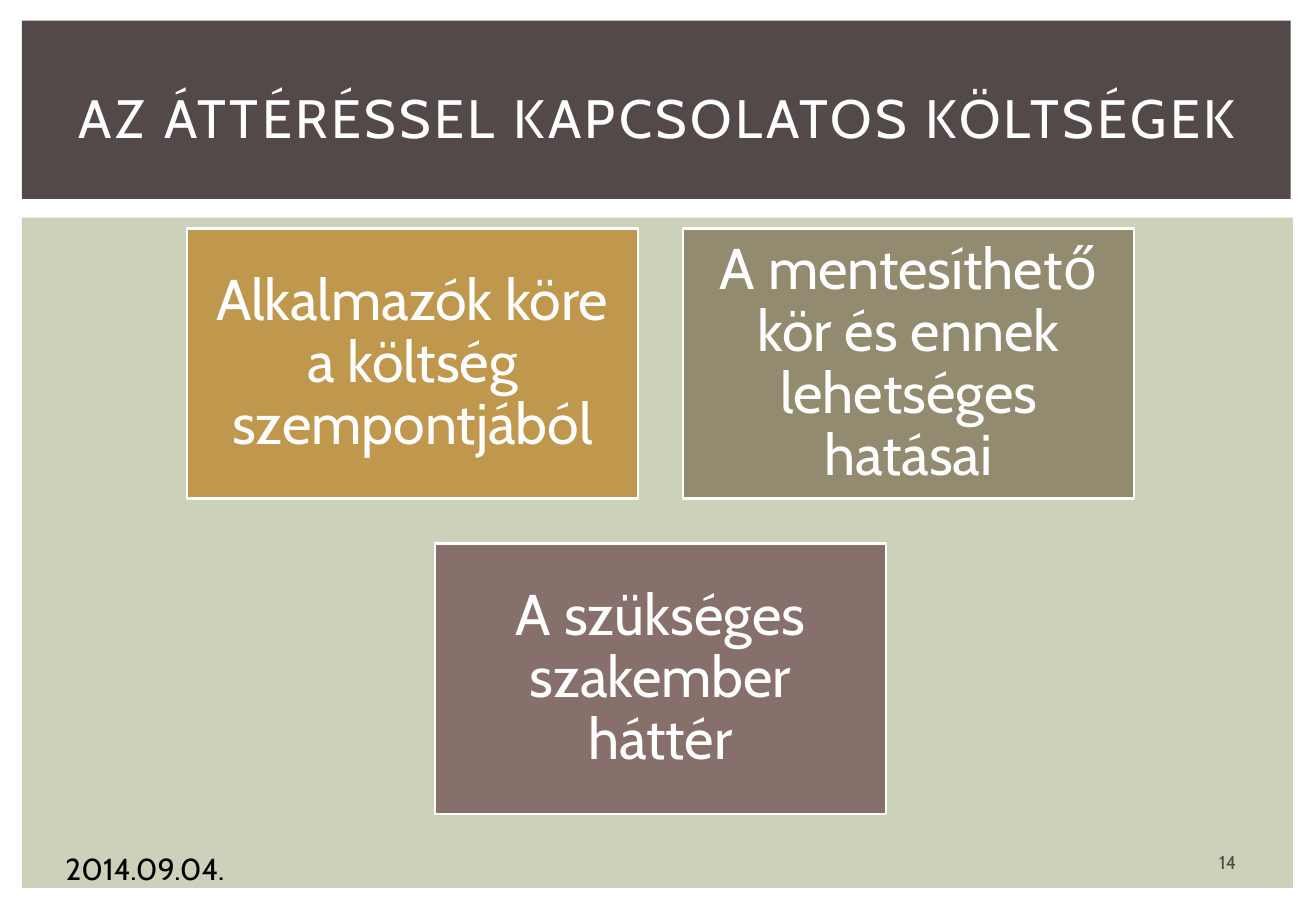
from dataclasses import dataclass

from pptx import Presentation
from pptx.dml.color import RGBColor
from pptx.enum.shapes import MSO_SHAPE as Preset
from pptx.enum.text import MSO_ANCHOR as Anchor, MSO_AUTO_SIZE as AutoSize, PP_ALIGN as Align
from pptx.slide import Slide
from pptx.text.text import TextFrame
from pptx.util import Cm, Pt

COLORS = {
    "white": "FFFFFF",
    "black": "000000",
    "sage": "CCD1B9",
    "umber": "534949",
    "gold": "BF974D",
    "olive": "928B70",
    "mauve": "87706B",
}
FONT = "Cabin"
CARD_WIDTH, CARD_HEIGHT, CARD_GAP = 9.43, 5.65, 0.94
CARDS_CENTER, CARDS_TOP = 13.81, 4.78
CARDS_PER_ROW = 2
CARD_INSET = 0.36


@dataclass(frozen=True)
class Box:
    left: float
    top: float
    width: float
    height: float

    def lengths(self) -> tuple[Cm, Cm, Cm, Cm]:
        return Cm(self.left), Cm(self.top), Cm(self.width), Cm(self.height)


@dataclass(frozen=True)
class Panel:
    box: Box
    color: str


@dataclass(frozen=True)
class Card:
    text: str
    color: str


@dataclass(frozen=True)
class FooterItem:
    text: str
    box: Box
    size: int
    color: str
    align: Align
    anchor: Anchor


PANELS = [
    Panel(Box(0.46, 4.55, 26.57, 14.02), "sage"),
    Panel(Box(0.46, 0.43, 26.52, 3.73), "umber"),
]
CARDS = [
    Card("Alkalmazók köre a költség szempontjából", "gold"),
    Card("A mentesíthető kör és ennek lehetséges hatásai", "olive"),
    Card("A szükséges szakember háttér", "mauve"),
]
FOOTER = [
    FooterItem("2014.09.04.", Box(1.12, 17.65, 6.43, 0.76), 18, "black", Align.LEFT, Anchor.TOP),
    FooterItem("14", Box(24.79, 17.65, 1.75, 0.76), 11, "umber", Align.CENTER, Anchor.MIDDLE),
]


def rgb(color: str) -> RGBColor:
    return RGBColor.from_string(COLORS[color])


def write(frame: TextFrame, text: str, size: int, color: str,
          align: Align = Align.CENTER, anchor: Anchor = Anchor.MIDDLE) -> None:
    frame.text = text
    frame.word_wrap = True
    frame.auto_size = AutoSize.NONE
    frame.vertical_anchor = anchor
    paragraph = frame.paragraphs[0]
    paragraph.alignment = align
    paragraph.font.name = FONT
    paragraph.font.size = Pt(size)
    paragraph.font.color.rgb = rgb(color)


def add_panel(slide: Slide, panel: Panel) -> TextFrame:
    rectangle = slide.shapes.add_shape(Preset.RECTANGLE, *panel.box.lengths())
    rectangle.shadow.inherit = False
    rectangle.fill.solid()
    rectangle.fill.fore_color.rgb = rgb(panel.color)
    rectangle.line.fill.background()
    return rectangle


def add_card(slide: Slide, card: Card, box: Box) -> None:
    rectangle = add_panel(slide, Panel(box, card.color))
    rectangle.line.color.rgb = rgb("white")
    rectangle.line.width = Pt(1.5)
    frame = rectangle.text_frame
    write(frame, card.text, 34, "white")
    frame.margin_left = frame.margin_right = Cm(CARD_INSET)
    frame.margin_top = frame.margin_bottom = Cm(CARD_INSET)
    frame.paragraphs[0].line_spacing = 0.9


def add_cards(slide: Slide) -> None:
    for start in range(0, len(CARDS), CARDS_PER_ROW):
        row = CARDS[start:start + CARDS_PER_ROW]
        row_width = len(row) * (CARD_WIDTH + CARD_GAP) - CARD_GAP
        left = CARDS_CENTER - row_width / 2
        top = CARDS_TOP + start // CARDS_PER_ROW * (CARD_HEIGHT + CARD_GAP)
        for column, card in enumerate(row):
            card_left = left + column * (CARD_WIDTH + CARD_GAP)
            add_card(slide, card, Box(card_left, top, CARD_WIDTH, CARD_HEIGHT))


def add_footer_item(slide: Slide, item: FooterItem) -> None:
    frame = slide.shapes.add_textbox(*item.box.lengths()).text_frame
    write(frame, item.text, item.size, item.color, item.align, item.anchor)


def place_title(slide: Slide, text: str, box: Box) -> None:
    title = slide.shapes.title
    title.left, title.top, title.width, title.height = box.lengths()
    write(title.text_frame, text, 32, "white")
    title.text_frame.paragraphs[0].runs[0]._r.get_or_add_rPr().set("spc", "200")
    title.element.getparent().append(title.element)


def main() -> None:
    deck = Presentation()
    deck.slide_width, deck.slide_height = Cm(27.51), Cm(19.05)
    slide = deck.slides.add_slide(deck.slide_layouts.get_by_name("Title Only"))
    for panel in PANELS:
        add_panel(slide, panel)
    add_cards(slide)
    for item in FOOTER:
        add_footer_item(slide, item)
    place_title(slide, "AZ ÁTTÉRÉSSEL KAPCSOLATOS KÖLTSÉGEK", Box(1.14, 0.99, 25.22, 2.92))
    deck.save("out.pptx")


if __name__ == "__main__":
    main()
